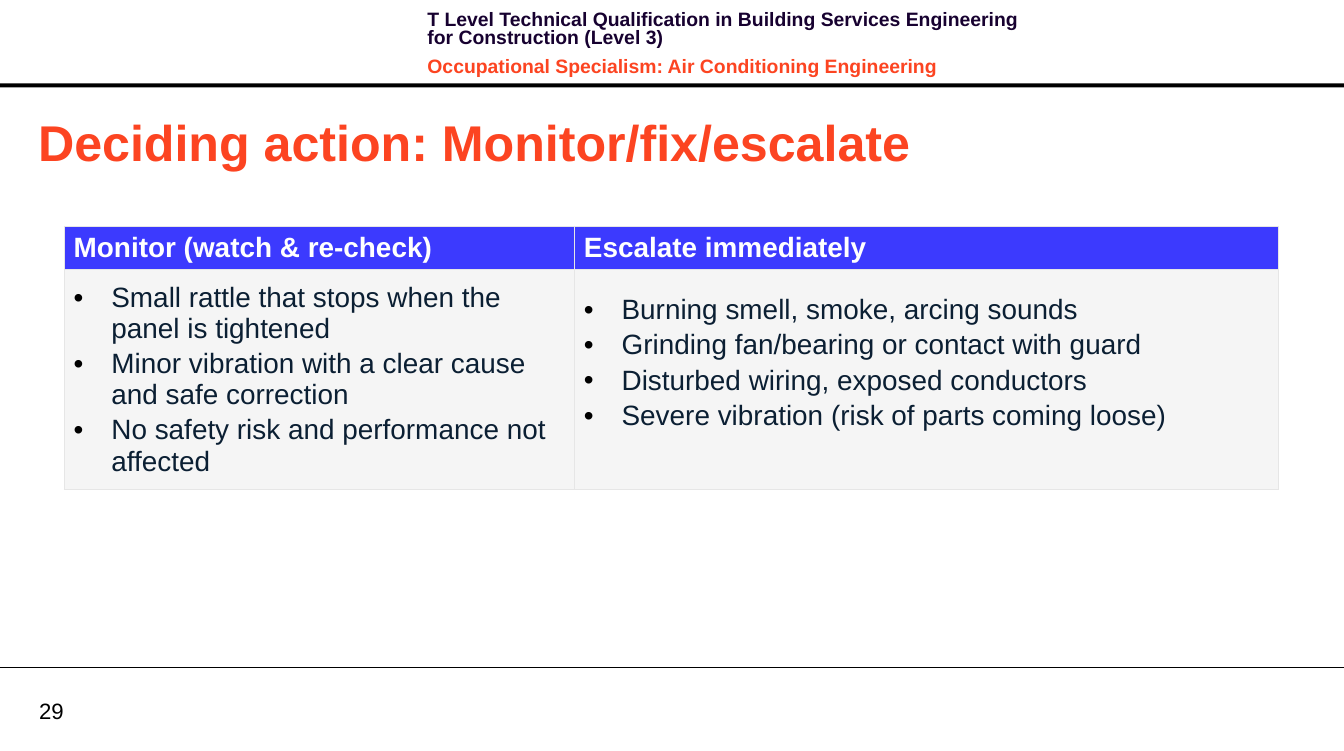
import pptx
import pptx.util
import pptx.dml.color
import pptx.enum.shapes
import pptx.enum.text
import pptx.oxml
import pptx.oxml.ns

Pt = pptx.util.Pt
WIDE, HIGH = 964, 538.6
HUES = {
    "black": "000000", "white": "FFFFFF", "plum": "170130", "coral": "FC4421",
    "blue": "3C3AFE", "navy": "0B1F33", "pale": "F5F5F5", "edge": "E6E6E6",
}
HEADS = ["Monitor (watch & re-check)", "Escalate immediately"]
LISTS = [
    ["Small rattle that stops when the panel is tightened",
     "Minor vibration with a clear cause and safe correction",
     "No safety risk and performance not affected"],
    ["Burning smell, smoke, arcing sounds",
     "Grinding fan/bearing or contact with guard",
     "Disturbed wiring, exposed conductors",
     "Severe vibration (risk of parts coming loose)"],
]
COLS = [366, 505]
ROWS = [31, 156]
FEET = [3.6, 27.6]  # bottom margin of each list cell


def rgb(hue):
    return pptx.dml.color.RGBColor.from_string(HUES[hue])


def apply(item, **values):
    for name, value in values.items():
        setattr(item, name, value)


def node(tag, inner="", **attrs):
    """Build one DrawingML element."""
    pairs = "".join(f' {name}="{value}"' for name, value in attrs.items())
    space = pptx.oxml.ns.nsdecls("a")
    return pptx.oxml.parse_xml(f"<a:{tag} {space}{pairs}>{inner}</a:{tag}>")


def write(frame, lines, size, bold=False, bullet=False, **form):
    """Fill a frame with (text, hue) paragraphs."""
    for index, (text, hue) in enumerate(lines):
        para = frame.paragraphs[0] if index == 0 else frame.add_paragraph()
        apply(para, **form)
        if index == 0:
            para.space_before = Pt(0)
        if bullet:
            dot(para)
        run = para.add_run()
        run.text = text
        apply(run.font, name="Arial", size=Pt(size), bold=bold)
        run.font.color.rgb = rgb(hue)


def dot(para):
    props = para._p.get_or_add_pPr()
    props.set("marL", str(Pt(27)))
    props.set("indent", str(-Pt(27)))
    props.append(node("buClr", f'<a:srgbClr val="{HUES["black"]}"/>'))
    props.append(node("buFont", typeface="Arial"))
    props.append(node("buChar", char="•"))


def label(slide, box, lines, size, pad=(7.2, 3.6), anchor="TOP", **form):
    frame = slide.shapes.add_textbox(*map(Pt, box)).text_frame
    side, end = map(Pt, pad)
    apply(frame, word_wrap=True, margin_left=side, margin_right=side,
          margin_top=end, margin_bottom=end,
          vertical_anchor=getattr(pptx.enum.text.MSO_ANCHOR, anchor))
    write(frame, lines, size, **form)


def bar(slide, top, thick):
    kind = pptx.enum.shapes.MSO_SHAPE.RECTANGLE
    shape = slide.shapes.add_shape(kind, 0, Pt(top), Pt(WIDE), Pt(thick))
    shape.shadow.inherit = False
    shape.fill.solid()
    shape.fill.fore_color.rgb = rgb("black")
    shape.line.fill.background()


def rule(slide, top):
    kind = pptx.enum.shapes.MSO_CONNECTOR.STRAIGHT
    line = slide.shapes.add_connector(kind, 0, Pt(top), Pt(WIDE), Pt(top))
    line.line.color.rgb = rgb("black")
    line.line.width = Pt(0.75)
    line._element.spPr.append(node("effectLst"))


def paint(cell, hue, foot=3.6):
    """Set borders, fill and margins of a cell."""
    props = cell._tc.get_or_add_tcPr()
    ink = f'<a:solidFill><a:srgbClr val="{HUES["edge"]}"/></a:solidFill>'
    for side in "LRTB":
        props.append(node("ln" + side, ink, w=Pt(0.5)))
    cell.fill.solid()
    cell.fill.fore_color.rgb = rgb(hue)
    apply(cell, vertical_anchor=pptx.enum.text.MSO_ANCHOR.MIDDLE,
          margin_left=Pt(6.8), margin_right=Pt(6.8),
          margin_top=Pt(3.6), margin_bottom=Pt(foot))


def grid(slide, left, top):
    table = slide.shapes.add_table(
        len(ROWS), len(COLS), Pt(left), Pt(top), Pt(sum(COLS)), Pt(sum(ROWS))
    ).table
    for row, high in zip(table.rows, ROWS):
        row.height = Pt(high)
    for col, wide in enumerate(COLS):
        table.columns[col].width = Pt(wide)
        head, body = table.cell(0, col), table.cell(1, col)
        paint(head, "blue")
        write(head.text_frame, [(HEADS[col], "white")], 20, bold=True)
        paint(body, "pale", FEET[col])
        items = [(text, "navy") for text in LISTS[col]]
        write(body.text_frame, items, 20, bullet=True, space_after=Pt(3))


def main():
    deck = pptx.Presentation()
    apply(deck, slide_width=Pt(WIDE), slide_height=Pt(HIGH))
    slide = deck.slides.add_slide(deck.slide_layouts[6])
    bar(slide, 59.8, 2.9)
    rule(slide, 478.8)
    course = [
        ("T Level Technical Qualification in Building Services Engineering "
         "for Construction (Level 3)", "plum"),
        ("Occupational Specialism: Air Conditioning Engineering", "coral"),
    ]
    label(slide, (299.5, 5, 441.4, 46), course, 13.9, bold=True,
          line_spacing=Pt(13), space_before=Pt(4), space_after=Pt(4))
    label(slide, (28, 499.7, 46, 19.4), [("29", "black")], 15.9,
          pad=(0, 0), anchor="MIDDLE")
    label(slide, (20.2, 76.3, 825.8, 51),
          [("Deciding action: Monitor/fix/escalate", "coral")], 36, bold=True)
    grid(slide, 46.1, 162.2)
    deck.save("out.pptx")


if __name__ == "__main__":
    main()
